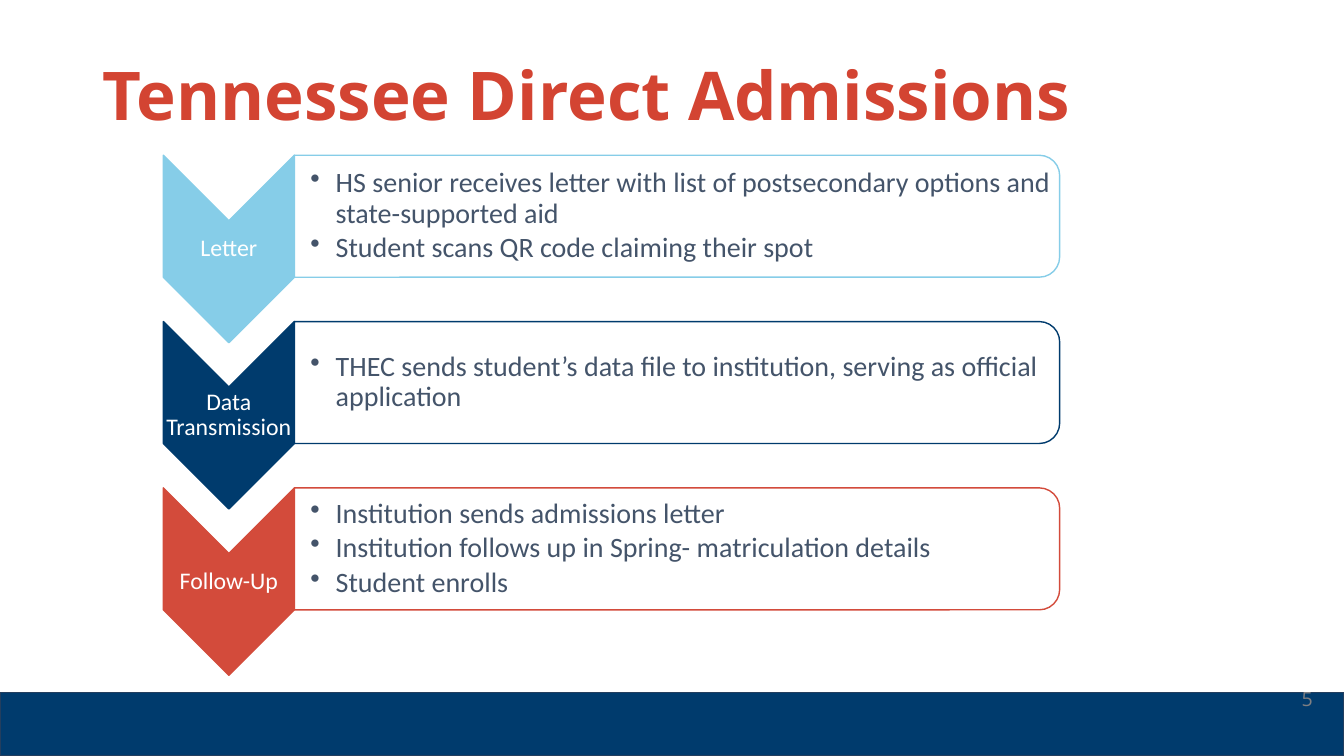
from pptx import Presentation
from pptx.dml.color import RGBColor
from pptx.enum.shapes import MSO_SHAPE
from pptx.enum.text import MSO_ANCHOR, PP_ALIGN
from pptx.oxml.ns import qn
from pptx.util import Inches, Pt
from lxml.etree import SubElement

TITLE = "Tennessee Direct Admissions"
PAGE = "5"
STEPS = [
    ("Letter", "sky", [
        "HS senior receives letter with list of postsecondary options and state-supported aid",
        "Student scans QR code claiming their spot"]),
    ("Data Transmission", "navy", [
        "THEC sends student’s data file to institution, serving as official application"]),
    ("Follow-Up", "red", [
        "Institution sends admissions letter",
        "Institution follows up in Spring- matriculation details",
        "Student enrolls"]),
]
COLORS = {"sky": "86CDE8", "navy": "003B6D", "red": "D34B3B", "title": "D34432",
          "edge": "233E5E", "page": "7F7F82", "body": "44546A", "white": "FFFFFF"}
WIDE, HIGH = 13.33, 7.5
LEFT, TOP, PITCH = 1.62, 1.54, 1.65
ARROW_W, ARROW_H = 1.3, 1.86
BAR_W, BAR_H = 7.59, 1.21


def color(name):
    """Return the named colour."""
    return RGBColor.from_string(COLORS[name])


def add_form(slide, kind, box, fill, line, turn=0):
    """Draw a filled shape over the box, rotated by a quarter if turn is 90."""
    x, y, w, h = box
    if turn:
        x, y, w, h = x + (w - h) / 2, y + (h - w) / 2, h, w
    form = slide.shapes.add_shape(kind, Inches(x), Inches(y), Inches(w), Inches(h))
    form.rotation = turn
    form.shadow.inherit = False
    form.fill.solid()
    form.fill.fore_color.rgb = color(fill)
    form.line.color.rgb = color(line)
    form.line.width = Pt(1)


def add_text(slide, box, lines, font, size, tint, bold=False, align=PP_ALIGN.LEFT,
             anchor=MSO_ANCHOR.MIDDLE, pads=None, lead=0.9, after=0, bullet=False):
    """Write lines as paragraphs in a text box."""
    frame = slide.shapes.add_textbox(*map(Inches, box)).text_frame
    frame.word_wrap = True
    frame.vertical_anchor = anchor
    if pads:
        (frame.margin_left, frame.margin_top,
         frame.margin_right, frame.margin_bottom) = map(Inches, pads)
    for i, line in enumerate(lines):
        para = frame.add_paragraph() if i else frame.paragraphs[0]
        para.alignment = align
        para.line_spacing = lead
        para.space_after = Pt(after)
        if bullet:
            props = para._p.get_or_add_pPr()
            props.set("marL", str(Inches(0.25)))
            props.set("indent", str(-Inches(0.25)))
            SubElement(props, qn("a:buChar")).set("char", "•")
        run = para.add_run()
        run.text = line
        run.font.name = font
        run.font.size = Pt(size)
        run.font.bold = bold
        run.font.color.rgb = color(tint)


def main():
    """Build the slide."""
    deck = Presentation()
    deck.slide_width, deck.slide_height = Inches(WIDE), Inches(HIGH)
    slide = deck.slides.add_slide(deck.slide_layouts[6])
    add_form(slide, MSO_SHAPE.RECTANGLE, (0, 6.87, WIDE, 0.63), "navy", "edge")
    add_text(slide, (0.92, 0.25, 11.5, 1.45), [TITLE], "Open Sans", 48, "title", bold=True)
    add_text(slide, (12.42, 6.77, 0.7, 0.4), [PAGE], "Open Sans", 14, "page",
             align=PP_ALIGN.RIGHT, anchor=MSO_ANCHOR.TOP, lead=1)
    right = LEFT + ARROW_W
    for i, (label, tint, points) in enumerate(STEPS):
        y = TOP + i * PITCH
        add_form(slide, MSO_SHAPE.CHEVRON, (LEFT, y, ARROW_W, ARROW_H), tint, tint, 90)
        add_text(slide, (LEFT, y + ARROW_W / 2, ARROW_W, ARROW_H - ARROW_W), [label],
                 "Calibri", 17, "white", align=PP_ALIGN.CENTER, pads=[0.01] * 4, after=6)
        add_form(slide, MSO_SHAPE.ROUND_2_SAME_RECTANGLE, (right, y, BAR_W, BAR_H),
                 "white", tint, 90)
        add_text(slide, (right, y + 0.06, BAR_W - 0.06, BAR_H - 0.12), points,
                 "Calibri", 20, "body", pads=(0.16, 0.01, 0.01, 0.01), after=3, bullet=True)
    deck.save("out.pptx")


if __name__ == "__main__":
    main()
